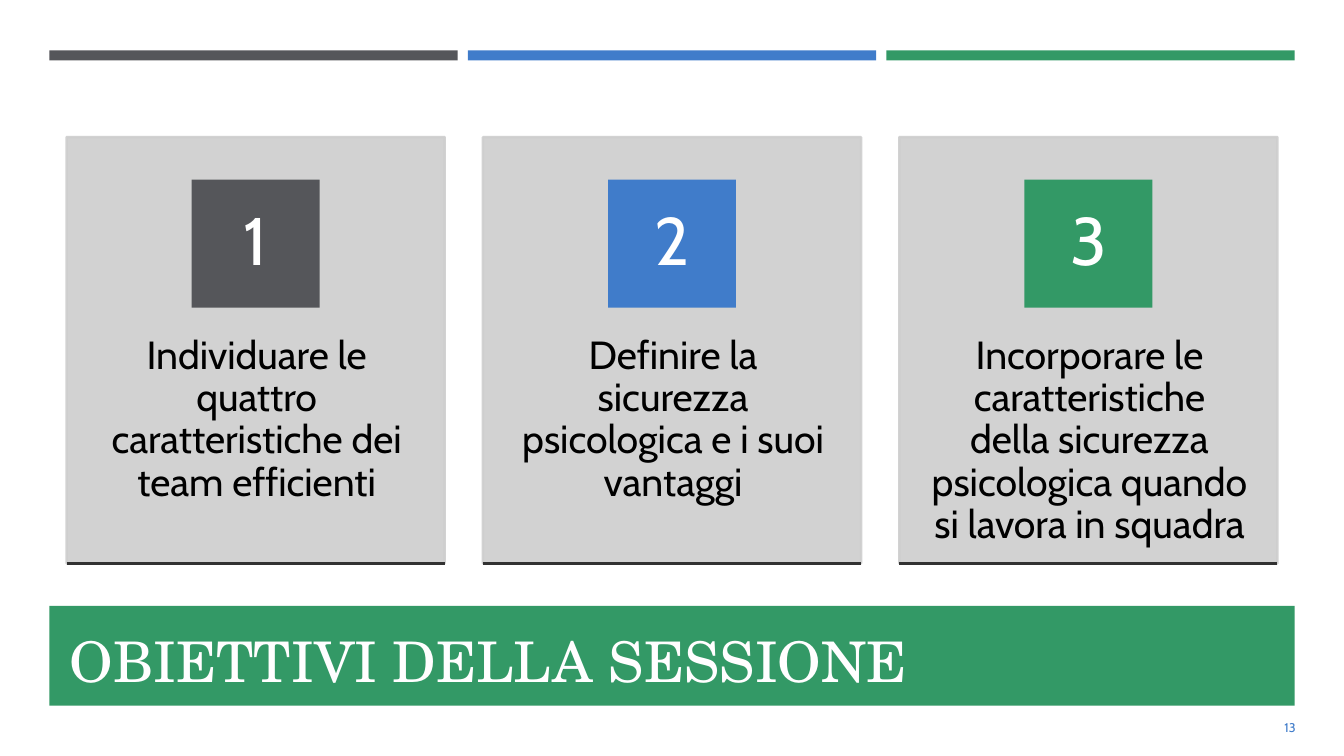
import pptx
import pptx.dml.color
import pptx.enum.shapes
import pptx.enum.text
import pptx.oxml
import pptx.oxml.ns
import pptx.util

RGBColor = pptx.dml.color.RGBColor
Inches = pptx.util.Inches
Pt = pptx.util.Pt
ALIGN = pptx.enum.text.PP_ALIGN
ANCHOR = pptx.enum.text.MSO_ANCHOR

SLATE = RGBColor(0x55, 0x56, 0x5A)
BLUE = RGBColor(0x40, 0x7C, 0xCA)
GREEN = RGBColor(0x33, 0x99, 0x66)
PANEL = RGBColor(0xCE, 0xCE, 0xCE)
RULE = RGBColor(0x32, 0x32, 0x32)
BLACK = RGBColor(0, 0, 0)
WHITE = RGBColor(0xFF, 0xFF, 0xFF)
TITLE_WHITE = RGBColor(0xFF, 0xFE, 0xFF)
ACCENTS = [SLATE, BLUE, GREEN]

BODY_FONT = "Cabin"
TITLE_FONT = "TeX Gyre Schola"

GOALS = [
    "Individuare le quattro caratteristiche dei team efficienti",
    "Definire la sicurezza psicologica e i suoi vantaggi",
    "Incorporare le caratteristiche della sicurezza psicologica "
    "quando si lavora in squadra",
]

# Boxes are left, top, width, height in inches
STRIPES_BOX = (0.49, 0.5, 12.35, 0.1)
CARDS_BOX = (0.66, 1.36, 12.01, 4.23)
TITLE_BOX = (0.49, 6.01, 12.35, 0.99)
NUMBER_BOX = (11.8, 7.02, 1.15, 0.4)


def columns(box, count, gap):
    """Split a box into equal columns."""
    left, top, width, height = box
    column = (width - gap * (count - 1)) / count
    return [(left + i * (column + gap), top, column, height) for i in range(count)]


def add_panel(shapes, box, fill):
    panel = shapes.add_shape(
        pptx.enum.shapes.MSO_SHAPE.RECTANGLE, *map(Inches, box))
    panel.shadow.inherit = False
    panel.fill.solid()
    panel.fill.fore_color.rgb = fill
    panel.line.fill.background()
    return panel


def set_text(shape, text, size, color, name=BODY_FONT, align=ALIGN.CENTER,
             anchor=ANCHOR.MIDDLE, spacing=0.9, insets=(0.1, 0.05, 0.1, 0.05)):
    frame = shape.text_frame
    frame.text = text
    sides = ("margin_left", "margin_top", "margin_right", "margin_bottom")
    frame_format = dict(zip(sides, map(Inches, insets)))
    frame_format.update(word_wrap=True, vertical_anchor=anchor,
                        auto_size=pptx.enum.text.MSO_AUTO_SIZE.NONE)
    paragraph = frame.paragraphs[0]
    formats = [
        (frame, frame_format),
        (paragraph, {"alignment": align, "line_spacing": spacing,
                     "space_before": Pt(0)}),
        (paragraph.runs[0].font, {"name": name, "size": Pt(size)}),
    ]
    for target, values in formats:
        for attribute, value in values.items():
            setattr(target, attribute, value)
    paragraph.runs[0].font.color.rgb = color


def make_translucent(shape, percent):
    for color in shape.element.spPr.iter(pptx.oxml.ns.qn("a:srgbClr")):
        color.append(pptx.oxml.parse_xml(
            f'<a:alpha {pptx.oxml.ns.nsdecls("a")} val="{percent * 1000}"/>'))


def add_stripes(slide, box):
    for stripe, accent in zip(columns(box, len(ACCENTS), 0.1), ACCENTS):
        add_panel(slide.shapes, stripe, accent)


def add_card(slide, box, number, goal, accent):
    left, top, width, height = box
    shapes = slide.shapes.add_group_shape().shapes

    # Grey background
    background = add_panel(shapes, box, PANEL)
    background.line.color.rgb = PANEL
    background.line.width = Pt(1.75)
    make_translucent(background, 90)

    # Goal
    goal_box = (left, top + 0.38 * height, width, 0.6 * height)
    set_text(shapes.add_textbox(*map(Inches, goal_box)), goal, 28, BLACK,
             anchor=ANCHOR.TOP, insets=(0.31, 0.36, 0.29, 0.36))

    # Numbered square
    side = 0.3 * height
    square = (left + (width - side) / 2, top + 0.1 * height, side, side)
    set_text(add_panel(shapes, square, accent), str(number), 48, WHITE,
             insets=(0.1, 0.01, 0.1, 0.01))

    # Bottom rule
    bottom = top + height
    rule = shapes.add_connector(
        pptx.enum.shapes.MSO_CONNECTOR.STRAIGHT,
        *map(Inches, (left, bottom, left + width, bottom)))
    rule.line.color.rgb = RULE
    rule.line.width = Pt(1.75)
    rule.element.spPr.append(pptx.oxml.parse_xml(
        f'<a:effectLst {pptx.oxml.ns.nsdecls("a")}/>'))


def add_cards(slide, box):
    cards = zip(columns(box, len(GOALS), 0.38), GOALS, ACCENTS)
    for number, (card, goal, accent) in enumerate(cards, start=1):
        add_card(slide, card, number, goal, accent)


def add_title(slide, box):
    left, top, width, height = box
    add_panel(slide.shapes, box, GREEN)
    title = slide.shapes.title
    title_box = (left + 0.1, top + 0.1, width - 0.29, height - 0.12)
    for side, value in zip(("left", "top", "width", "height"), title_box):
        setattr(title, side, Inches(value))
    set_text(title, "OBIETTIVI DELLA SESSIONE", 40, TITLE_WHITE,
             name=TITLE_FONT, align=ALIGN.LEFT, spacing=1.0)
    # Bring the title in front of its band
    title.element.getparent().append(title.element)


def add_slide_number(slide, box):
    set_text(slide.shapes.add_textbox(*map(Inches, box)), "13", 9, BLUE,
             align=ALIGN.RIGHT, spacing=1.0)


def main():
    deck = pptx.Presentation()
    deck.slide_width = Inches(13.33)
    deck.slide_height = Inches(7.5)
    slide = deck.slides.add_slide(deck.slide_layouts.get_by_name("Title Only"))
    add_stripes(slide, STRIPES_BOX)
    add_title(slide, TITLE_BOX)
    add_slide_number(slide, NUMBER_BOX)
    add_cards(slide, CARDS_BOX)
    deck.save("out.pptx")


if __name__ == "__main__":
    main()
